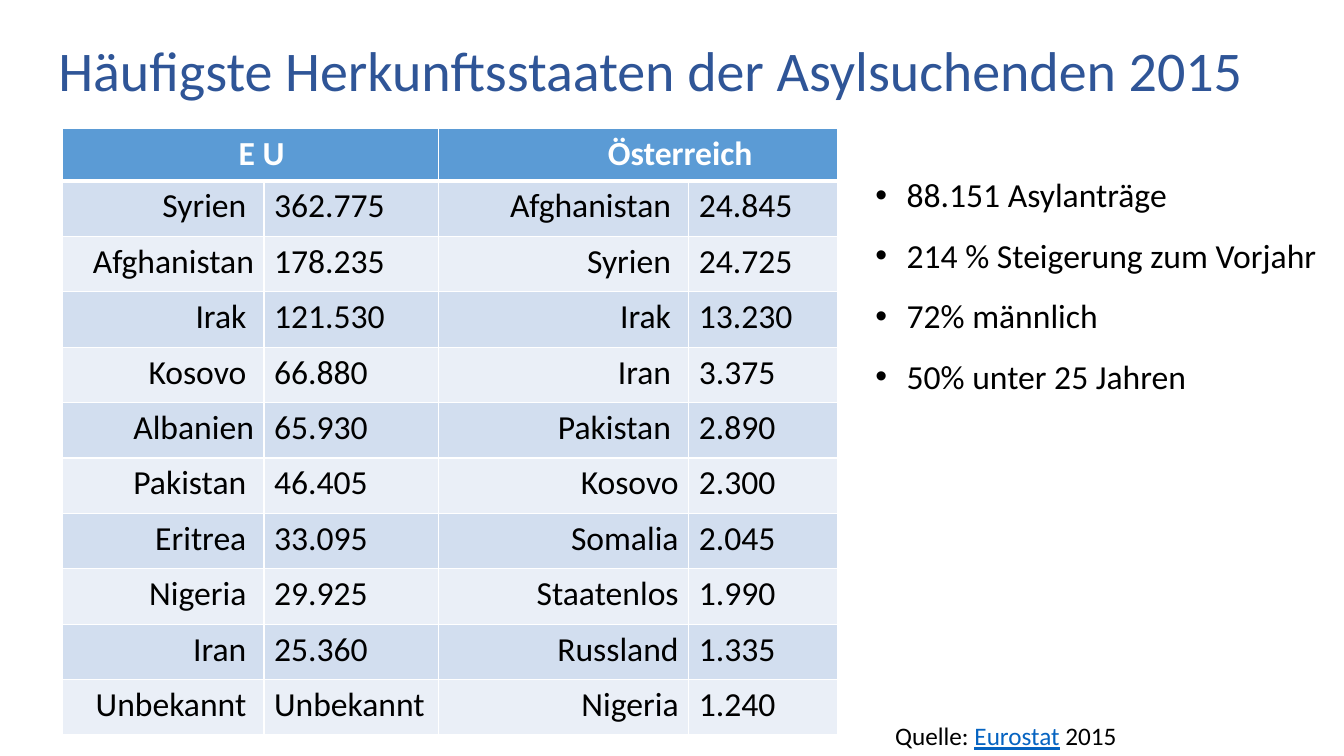
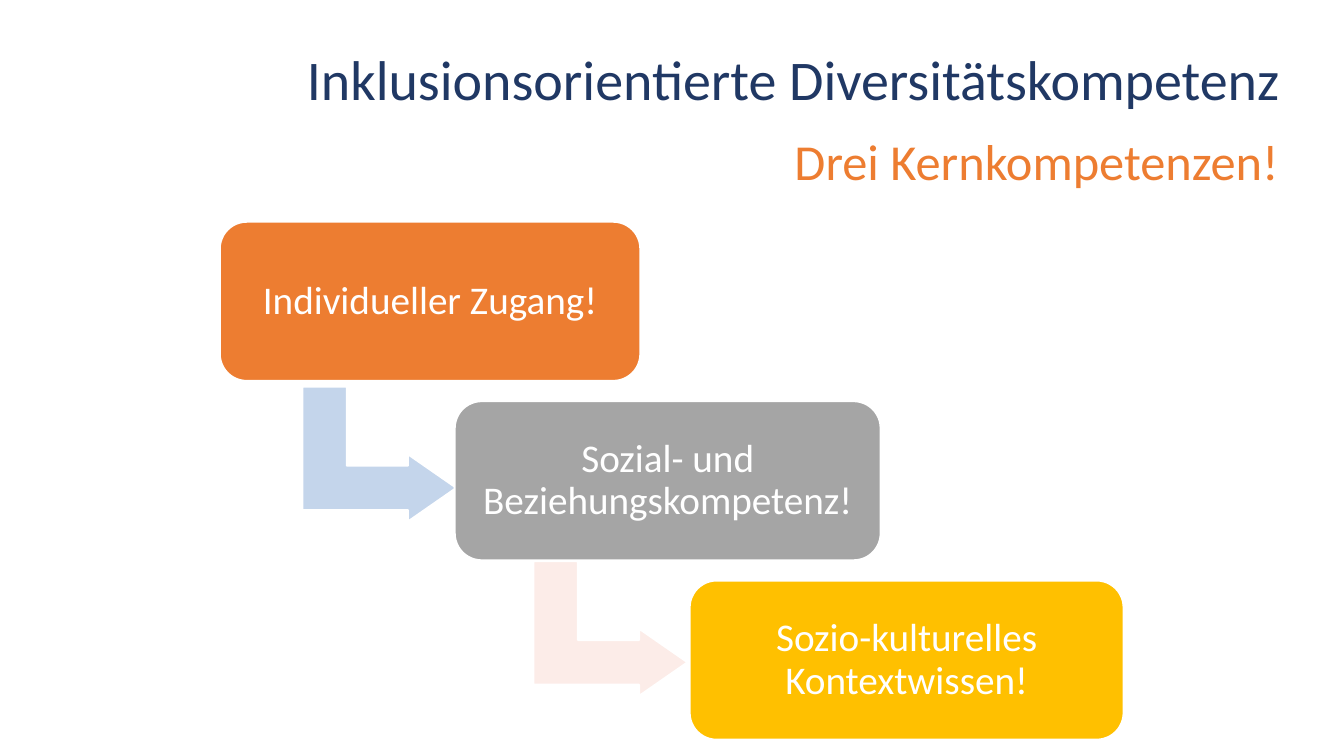
from dataclasses import dataclass

from lxml import etree
from pptx import Presentation
from pptx.dml.color import RGBColor
from pptx.enum.shapes import MSO_SHAPE
from pptx.enum.text import MSO_ANCHOR, PP_ALIGN
from pptx.oxml.ns import qn
from pptx.util import Inches, Pt

LEFT, CENTER, RIGHT = PP_ALIGN.LEFT, PP_ALIGN.CENTER, PP_ALIGN.RIGHT
TOP, MIDDLE = MSO_ANCHOR.TOP, MSO_ANCHOR.MIDDLE
ROUNDED, BENT_ARROW = MSO_SHAPE.ROUNDED_RECTANGLE, MSO_SHAPE.BENT_UP_ARROW
SLIDE_WIDTH, SLIDE_HEIGHT = Inches(13.33), Inches(7.5)


@dataclass(frozen=True)
class Theme:
    font: str = "Calibri"
    title_size: int = 40
    subtitle_size: int = 36
    step_size: int = 28
    body_size: int = 24
    source_size: int = 18
    black: str = "000000"
    white: str = "FFFFFF"
    blue: str = "2F5597"
    navy: str = "203864"
    link: str = "0563C1"
    orange: str = "ED7D31"
    gray: str = "A5A5A5"
    gold: str = "FFC000"
    pale_blue: str = "C4D5EB"
    pale_rose: str = "FCECE8"
    header: str = "5B9BD5"
    bands: tuple = ("D2DEEF", "EAEFF7")


THEME = Theme()

EU_ORIGINS = [
    ("Syrien ", "362.775"), ("Afghanistan", "178.235"), ("Irak ", "121.530"),
    ("Kosovo ", "66.880"), ("Albanien", "65.930"), ("Pakistan ", "46.405"),
    ("Eritrea ", "33.095"), ("Nigeria ", "29.925"), ("Iran ", "25.360"),
    ("Unbekannt ", "Unbekannt"),
]
AUSTRIA_ORIGINS = [
    ("Afghanistan ", "24.845"), ("Syrien ", "24.725"), ("Irak ", "13.230"),
    ("Iran ", "3.375"), ("Pakistan ", "2.890"), ("Kosovo", "2.300"),
    ("Somalia", "2.045"), ("Staatenlos", "1.990"), ("Russland", "1.335"),
    ("Nigeria", "1.240"),
]
TABLE_HEADINGS = [("E U", 0.32), ("Österreich", 0.93)]
COLUMN_SHARES = (15, 13, 18.6, 11.1)
HEADER_SHARE, ROW_SHARE = 6.93, 7.33
KEY_FACTS = [
    "88.151 Asylanträge",
    "214 % Steigerung zum Vorjahr",
    "72% männlich",
    "50% unter 25 Jahren",
]
STEPS = [
    ("Individueller Zugang!", 31.3, THEME.orange, THEME.pale_blue),
    ("Sozial- und Beziehungskompetenz!", 31.7, THEME.gray, THEME.pale_rose),
    ("Sozio-kulturelles Kontextwissen!", 32.3, THEME.gold, None),
]


def across(share):
    return round(SLIDE_WIDTH * share / 100)


def down(share):
    return round(SLIDE_HEIGHT * share / 100)


def area(left, top, width, height):
    return across(left), down(top), across(width), down(height)


def color(value):
    return RGBColor.from_string(value)


def format_span(span, size, ink, bold=False):
    span.font.name = THEME.font
    span.font.size = Pt(size)
    span.font.bold = bold
    span.font.color.rgb = color(ink)


def fill_text(frame, lines, size, ink, align=LEFT, spacing=1.0, bold=False):
    frame.text = "\n".join(lines)
    for para in frame.paragraphs:
        para.alignment = align
        para.line_spacing = spacing
        for span in para.runs:
            format_span(span, size, ink, bold)


def add_text(page, place, lines, size, ink, align=LEFT, spacing=1.0, anchor=TOP):
    box = page.shapes.add_textbox(*area(*place))
    box.text_frame.word_wrap = True
    box.text_frame.vertical_anchor = anchor
    fill_text(box.text_frame, lines, size, ink, align, spacing)
    return box


def add_title(page, place, text, ink):
    add_text(page, place, [text], THEME.title_size, ink, spacing=0.9, anchor=MIDDLE)


def add_bullets(page, place, lines):
    box = add_text(page, place, lines, THEME.body_size, THEME.black, spacing=1.5)
    for para in box.text_frame.paragraphs:
        properties = para._p.get_or_add_pPr()
        properties.set("marL", str(Inches(0.31)))
        properties.set("indent", str(-Inches(0.31)))
        etree.SubElement(properties, qn("a:buFont")).set("typeface", "Arial")
        etree.SubElement(properties, qn("a:buChar")).set("char", "•")


def add_source(page, place, before, name, after):
    box = add_text(page, place, [before], THEME.source_size, THEME.black)
    box.text_frame.word_wrap = False
    para = box.text_frame.paragraphs[0]
    for text, ink, underline in ((name, THEME.link, True), (after, THEME.black, False)):
        span = para.add_run()
        span.text = text
        format_span(span, THEME.source_size, ink)
        span.font.underline = underline


def set_borders(cell, top=1, bottom=1):
    properties = cell._tc.get_or_add_tcPr()
    for side, width in (("L", 1), ("R", 1), ("T", top), ("B", bottom)):
        line = etree.SubElement(properties, qn(f"a:ln{side}"), w=str(Pt(width)))
        paint = etree.SubElement(line, qn("a:solidFill"))
        etree.SubElement(paint, qn("a:srgbClr"), val=THEME.white)


def style_cell(cell, fill, top=1, bottom=1):
    set_borders(cell, top, bottom)
    cell.fill.solid()
    cell.fill.fore_color.rgb = color(fill)


def add_origin_table(page, left, top):
    records = [eu + austria for eu, austria in zip(EU_ORIGINS, AUSTRIA_ORIGINS)]
    row_shares = [HEADER_SHARE] + [ROW_SHARE] * len(records)
    place = area(left, top, sum(COLUMN_SHARES), sum(row_shares))
    table = page.shapes.add_table(len(row_shares), len(COLUMN_SHARES), *place).table
    for column, share in zip(table.columns, COLUMN_SHARES):
        column.width = across(share)
    for row, share in zip(table.rows, row_shares):
        row.height = down(share)

    for cell in table.rows[0].cells:
        style_cell(cell, THEME.header, bottom=3)
    for index, (heading, margin) in enumerate(TABLE_HEADINGS):
        cell = table.cell(0, 2 * index)
        cell.merge(table.cell(0, 2 * index + 1))
        cell.margin_left = Inches(margin)
        fill_text(cell.text_frame, [heading], THEME.body_size, THEME.white, CENTER, bold=True)

    for row, record in enumerate(records, start=1):
        for column, text in enumerate(record):
            cell = table.cell(row, column)
            style_cell(cell, THEME.bands[(row - 1) % 2], top=3 if row == 1 else 1)
            align = LEFT if column % 2 else RIGHT
            fill_text(cell.text_frame, [text], THEME.body_size, THEME.black, align)


def add_block(page, kind, place, fill, adjustments):
    block = page.shapes.add_shape(kind, *area(*place))
    block.shadow.inherit = False
    block.fill.solid()
    block.fill.fore_color.rgb = color(fill)
    block.line.color.rgb = color(THEME.white)
    block.line.width = Pt(1.5)
    for index, value in enumerate(adjustments):
        block.adjustments[index] = value
    return block


def add_step(page, place, text, fill):
    frame = add_block(page, ROUNDED, place, fill, [0.17]).text_frame
    frame.word_wrap = True
    frame.vertical_anchor = MIDDLE
    frame.margin_left = frame.margin_right = Inches(0.2)
    fill_text(frame, [text], THEME.step_size, THEME.white, CENTER, 0.9)


def add_staircase(page):
    for index, (text, width, fill, arrow_fill) in enumerate(STEPS):
        if arrow_fill:
            place = (23.2 + 17.2 * index, 49.87 + 23.07 * index, 10.05, 20.4)
            arrow = add_block(page, BENT_ARROW, place, arrow_fill, [0.33, 0.25, 0.36])
            arrow.rotation = 90
        place = (16.35 + 17.48 * index, 29.33 + 23.73 * index, width, 21.07)
        add_step(page, place, text, fill)


def build_origins(page):
    add_title(page, (3.6, 0, 92.6, 19.33),
              "Häufigste Herkunftsstaaten der Asylsuchenden 2015", THEME.blue)
    add_source(page, (65.87, 94.67, 18.2, 5.33), "Quelle: ", "Eurostat", " 2015")
    add_origin_table(page, 4.65, 17)
    add_bullets(page, (64.4, 19.73, 35.3, 33.6), KEY_FACTS)


def build_competences(page):
    add_title(page, (22.1, 2, 75.9, 17.87),
              "Inklusionsorientierte Diversitätskompetenz", THEME.navy)
    add_staircase(page)
    add_text(page, (58.1, 16.53, 37.8, 9.47), ["Drei Kernkompetenzen!"],
             THEME.subtitle_size, THEME.orange, RIGHT)


def main():
    deck = Presentation()
    deck.slide_width, deck.slide_height = SLIDE_WIDTH, SLIDE_HEIGHT
    blank = deck.slide_layouts[6]
    for build in (build_origins, build_competences):
        build(deck.slides.add_slide(blank))
    deck.save("out.pptx")


if __name__ == "__main__":
    main()
